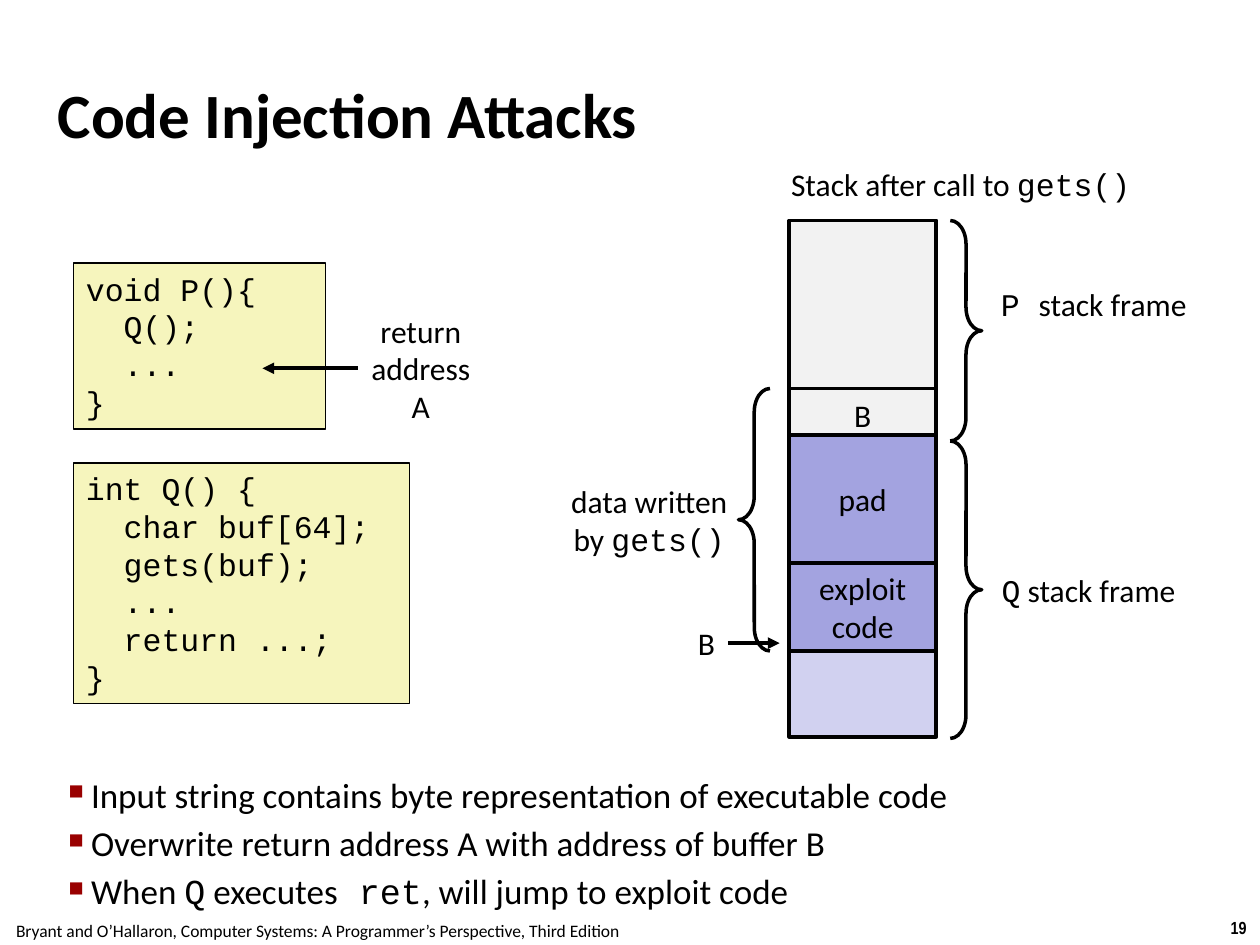
from dataclasses import dataclass

import pptx
import pptx.dml.color
import pptx.enum.dml
import pptx.enum.shapes
import pptx.enum.text
import pptx.oxml
import pptx.oxml.ns
import pptx.presentation
import pptx.util
from lxml import etree

Pt = pptx.util.Pt
Align = pptx.enum.text.PP_ALIGN
Anchor = pptx.enum.text.MSO_ANCHOR
Shape = pptx.enum.shapes.MSO_SHAPE
qn = pptx.oxml.ns.qn

SANS, MONO, NARROW = "Calibri", "Courier New", "Arial Narrow"
COLOURS = {
    "ink": "000000",
    "code": "F6F5BD",
    "caller": "F2F2F2",
    "written": "A3A3E0",
    "buffer": "D1D1F0",
    "bullet": "990000",
}

Box = tuple[float, float, float, float]
Line = list[tuple[str, str]]


@dataclass
class Label:
    box: Box
    lines: list[Line]
    size: float = 18
    bold: bool = False
    align: Align = Align.CENTER
    anchor: Anchor = Anchor.MIDDLE
    wrap: bool = False
    inset: float | None = None


@dataclass
class Block:
    box: Box
    fill: str
    lines: list[Line]
    border: float = 2.25
    align: Align = Align.CENTER
    anchor: Anchor = Anchor.MIDDLE


@dataclass
class Brace:
    box: Box
    preset: Shape


def plain(text: str, font: str = SANS) -> list[Line]:
    return [[(line, font)] for line in text.split("\n")]


def colour(key: str) -> pptx.dml.color.RGBColor:
    return pptx.dml.color.RGBColor.from_string(COLOURS[key])


def points(values):
    return [Pt(value) for value in values]


def write(frame, lines: list[Line], size: float, align: Align, bold: bool = False) -> None:
    for index, line in enumerate(lines):
        paragraph = frame.add_paragraph() if index else frame.paragraphs[0]
        paragraph.alignment = align
        paragraph.font.size = Pt(size)
        paragraph.font.bold = bold
        paragraph.font.color.rgb = colour("ink")
        fonts = {font for _, font in line}
        if len(fonts) == 1:
            paragraph.font.name = line[0][1]
        for text, font in line:
            run = paragraph.add_run()
            run.text = text
            if len(fonts) > 1:
                run.font.name = font


def draw_label(slide, label: Label):
    box = slide.shapes.add_textbox(*points(label.box))
    frame = box.text_frame
    frame.word_wrap = label.wrap
    frame.vertical_anchor = label.anchor
    if label.inset is not None:
        frame.margin_left = frame.margin_right = Pt(label.inset)
        frame.margin_top = frame.margin_bottom = Pt(label.inset)
    write(frame, label.lines, label.size, label.align, label.bold)
    return box


def draw_block(slide, block: Block) -> None:
    rect = slide.shapes.add_shape(Shape.RECTANGLE, *points(block.box))
    rect.shadow.inherit = False
    rect.fill.solid()
    rect.fill.fore_color.rgb = colour(block.fill)
    rect.line.color.rgb = colour("ink")
    rect.line.width = Pt(block.border)
    rect.text_frame.word_wrap = True
    rect.text_frame.vertical_anchor = block.anchor
    write(rect.text_frame, block.lines, 18, block.align)


def draw_brace(slide, brace: Brace) -> None:
    shape = slide.shapes.add_shape(brace.preset, *points(brace.box))
    shape.adjustments[0] = 0.75
    shape.shadow.inherit = False
    shape.fill.background()
    shape.line.color.rgb = colour("ink")
    shape.line.width = Pt(2)


def draw_arrow(slide, label, site: int, start: tuple[float, float], end_x: float) -> None:
    x, y = start
    arrow = slide.shapes.add_connector(
        pptx.enum.shapes.MSO_CONNECTOR.STRAIGHT, *points((x, y, end_x, y)))
    arrow.begin_connect(label, site)
    arrow.end_y = arrow.begin_y
    arrow.line.color.rgb = colour("ink")
    arrow.line.width = Pt(2.25)
    etree.SubElement(arrow.line._get_or_add_ln(), qn("a:tailEnd"), type="triangle")
    etree.SubElement(arrow._element.spPr, qn("a:effectLst"))


def add_bullet(paragraph) -> None:
    paragraph.line_spacing = 0.9
    paragraph.space_before = Pt(6)
    properties = paragraph._p.get_or_add_pPr()
    properties.set("marL", str(Pt(13)))
    properties.set("indent", str(-Pt(13)))
    defaults = properties.find(qn("a:defRPr"))
    tint = etree.Element(qn("a:buClr"))
    etree.SubElement(tint, qn("a:srgbClr"), val=COLOURS["bullet"])
    defaults.addprevious(tint)
    defaults.addprevious(etree.Element(qn("a:buSzPct"), val="60000"))
    defaults.addprevious(etree.Element(qn("a:buChar"), char="■"))


STACK_X, STACK_W = 451, 84
BRACE_X, BRACE_W = 543, 18

FURNITURE = [
    Label((695.5, 520.5, 24.5, 19.5), plain("19", NARROW), 10, True, anchor=Anchor.TOP),
    Label((-1.5, 522, 366, 19.5),
          plain("Bryant and O’Hallaron, Computer Systems: A Programmer’s Perspective, Third Edition"),
          10, anchor=Anchor.TOP),
    Label((30, 42, 654, 45), plain("Code Injection Attacks"), 36, True, Align.LEFT, wrap=True, inset=3),
]
TAKEAWAYS = Label(
    (36, 438, 650, 90),
    plain("Input string contains byte representation of executable code\n"
          "Overwrite return address A with address of buffer B")
    + [[("When ", SANS), ("Q", MONO), (" executes", SANS), (" ret", MONO),
        (", will jump to exploit code", SANS)]],
    20, align=Align.LEFT, wrap=True, inset=3)
CODE = [
    Block((42, 264.5, 192, 137.5), "code",
          plain("int Q() {\n  char buf[64];\n  gets(buf);\n  ...\n  return ...;\n}", MONO),
          1, Align.LEFT, Anchor.TOP),
    Block((42, 150.5, 144, 94.5), "code", plain("void P(){\n  Q();\n  ...\n}", MONO),
          1, Align.LEFT, Anchor.TOP),
]
STACK = [
    Block((STACK_X, 222, STACK_W, 30), "caller", plain("B")),
    Block((STACK_X, 126, STACK_W, 96), "caller", []),
    Block((STACK_X, 372, STACK_W, 49), "buffer", []),
    Block((STACK_X, 321.5, STACK_W, 50.5), "written", plain("exploit\ncode")),
    Block((STACK_X, 248.5, STACK_W, 73), "written", plain("pad")),
]
STACK_LABELS = [
    Label((443.5, 91, 211, 29), [[("Stack after call to ", SANS), ("gets()", MONO)]], anchor=Anchor.TOP),
    Label((564, 159, 122, 29), [[("P ", MONO), ("stack frame", SANS)]]),
    Label((564, 322.5, 116, 29), [[("Q", MONO), (" stack frame", SANS)]]),
    Label((317, 271.5, 108, 51), plain("data written") + [[("by ", SANS), ("gets()", MONO)]], wrap=True),
]
RETURN_ADDRESS = Label((204.5, 174, 72, 73), plain("return\naddress\nA"))
BUFFER_START = Label((391.5, 353, 24.5, 29), plain("B"))
BRACES = [
    Brace((BRACE_X, 126, BRACE_W, 126), Shape.RIGHT_BRACE),
    Brace((BRACE_X, 252, BRACE_W, 170), Shape.RIGHT_BRACE),
    Brace((422, 222, BRACE_W, 150), Shape.LEFT_BRACE),
]


def main() -> None:
    deck = pptx.Presentation()
    deck.slide_width, deck.slide_height = Pt(720), Pt(540)
    slide = deck.slides.add_slide(deck.slide_layouts[6])
    for label in FURNITURE:
        draw_label(slide, label)
    for paragraph in draw_label(slide, TAKEAWAYS).text_frame.paragraphs:
        add_bullet(paragraph)
    for block in CODE + STACK:
        draw_block(slide, block)
    for label in STACK_LABELS:
        draw_label(slide, label)
    draw_arrow(slide, draw_label(slide, RETURN_ADDRESS), 1, (204.5, 210.5), 150)
    draw_arrow(slide, draw_label(slide, BUFFER_START), 3, (416, 367.5), 445.5)
    for brace in BRACES:
        draw_brace(slide, brace)
    deck.save("out.pptx")


if __name__ == "__main__":
    main()
